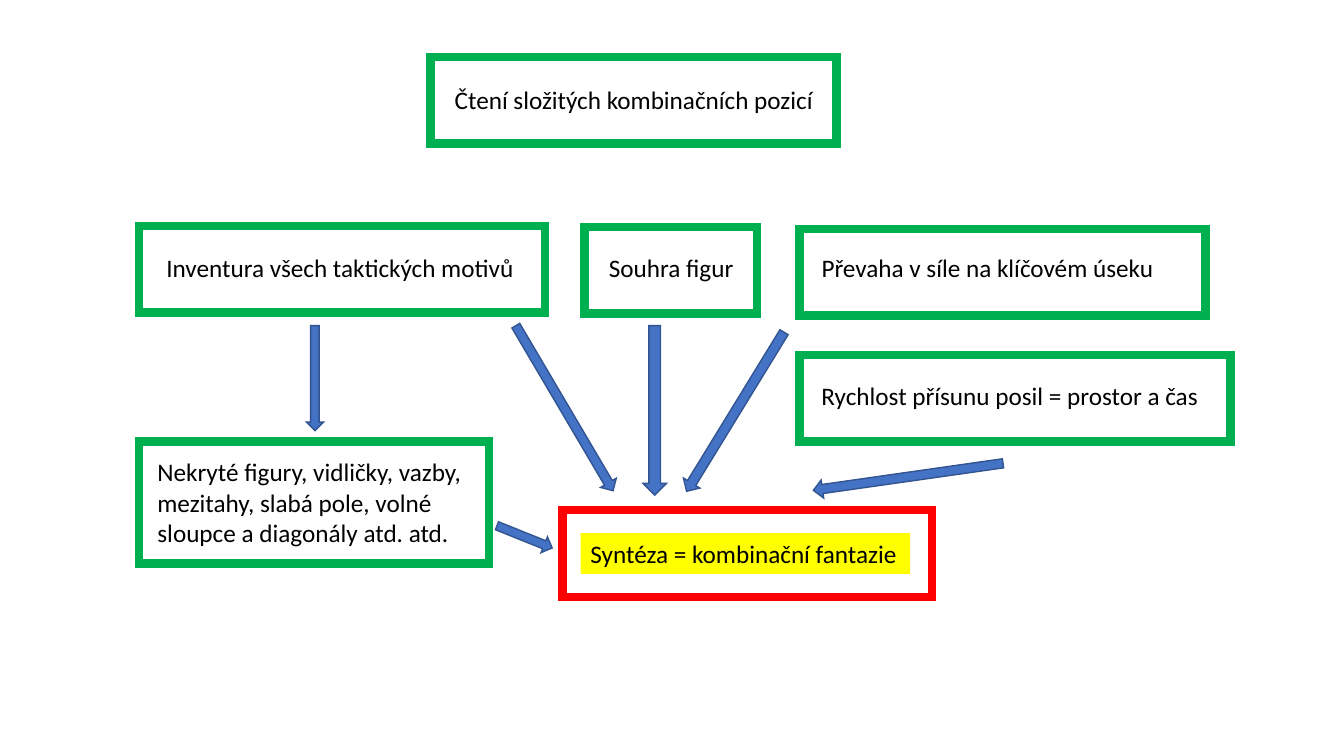
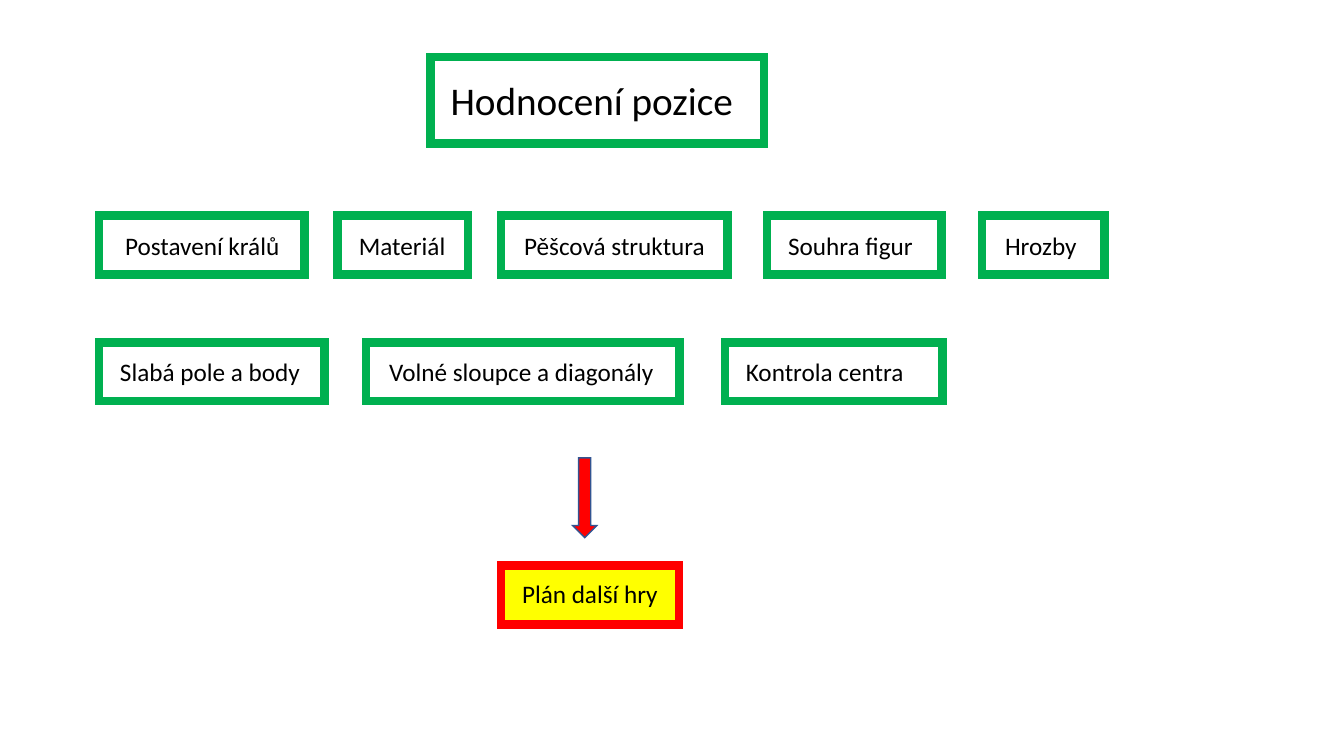
"""Two chess diagrams: reading combinations and evaluating a position."""
from lxml import etree
from pptx import Presentation
from pptx.dml.color import RGBColor
from pptx.enum.shapes import MSO_SHAPE
from pptx.enum.text import MSO_ANCHOR, PP_ALIGN
from pptx.oxml.ns import qn
from pptx.util import Pt

RECTANGLE, DOWN_ARROW = MSO_SHAPE.RECTANGLE, MSO_SHAPE.DOWN_ARROW
TOP, LEFT = MSO_ANCHOR.TOP, PP_ALIGN.LEFT

COLORS = {
    "topic": "00B050",
    "result": "FF0000",
    "highlight": "FFFF00",
    "arrow": "4472C4",
    "arrow_edge": "325491",
    "text": "000000",
}
FONT = "Calibri"
FRAME_WIDTH = 6
FRAME_FORMAT = {
    "word_wrap": True,
    "vertical_anchor": TOP,
    "margin_right": Pt(4),
    "margin_bottom": Pt(0),
}


def add_outline(slide, preset, bounds, fill=None, edge=None, edge_width=1):
    shape = slide.shapes.add_shape(preset, *map(Pt, bounds))
    shape.shadow.inherit = False
    if fill:
        shape.fill.solid()
        shape.fill.fore_color.rgb = RGBColor.from_string(COLORS[fill])
    else:
        shape.fill.background()
    if edge:
        shape.line.color.rgb = RGBColor.from_string(COLORS[edge])
        shape.line.width = Pt(edge_width)
        outline = shape._element.spPr.find(qn("a:ln"))
        etree.SubElement(outline, qn("a:miter"), lim="800000")
    else:
        shape.line.fill.background()
    return shape


def add_label(shape, text, inset_left, inset_top, size=18):
    frame = shape.text_frame
    insets = {"margin_left": Pt(inset_left), "margin_top": Pt(inset_top)}
    for name, value in {**FRAME_FORMAT, **insets}.items():
        setattr(frame, name, value)
    paragraph = frame.paragraphs[0]
    paragraph.alignment = LEFT
    run = paragraph.add_run()
    run.text = text
    for name, value in {"name": FONT, "size": Pt(size)}.items():
        setattr(run.font, name, value)
    run.font.color.rgb = RGBColor.from_string(COLORS["text"])


prs = Presentation()
prs.slide_width, prs.slide_height = Pt(960), Pt(540)
blank = prs.slide_layouts[6]

combinations = prs.slides.add_slide(blank)
combination_topics = [
    ("Čtení složitých kombinačních pozicí", (307.5, 40.5, 290, 62), 17.3, 20),
    ("Inventura všech taktických motivů", (99.4, 161.3, 290, 62), 19.4, 18.7),
    ("Souhra figur", (417.6, 162, 123, 62), 17.3, 18),
    ("Převaha v síle na klíčovém úseku", (571, 163.4, 290, 62), 15.8, 16.6),
    ("Rychlost přísunu posil = prostor a čas", (571, 253.4, 308, 62), 15.8, 18),
    ("Nekryté figury, vidličky, vazby, mezitahy, slabá pole, volné sloupce a diagonály atd. atd.",
     (99.4, 315.4, 250, 87), 13, 10.8),
]
for text, bounds, inset_left, inset_top in combination_topics:
    topic = add_outline(combinations, RECTANGLE, bounds, edge="topic", edge_width=FRAME_WIDTH)
    add_label(topic, text, inset_left, inset_top)

add_outline(combinations, RECTANGLE, (401.8, 364.3, 264, 62), edge="result", edge_width=FRAME_WIDTH)
synthesis = add_outline(combinations, RECTANGLE, (414.7, 380.9, 235.4, 29), fill="highlight")
add_label(synthesis, "Syntéza = kombinační fantazie", 7.2, 3.6)

combination_arrows = [
    ((396.7, 223.2, 13, 136.8), 329.5),
    ((642.2, 272.2, 13, 136.8), 81.9),
    ((368.6, 362.2, 12.2, 42.5), 291.9),
    ((459.4, 232.6, 16.6, 121), 0),
    ((218.9, 232.6, 12.2, 75), 0),
    ((518.4, 227.5, 13.7, 133.2), 31.5),
]
for bounds, rotation in combination_arrows:
    arrow = add_outline(combinations, DOWN_ARROW, bounds, fill="arrow", edge="arrow_edge")
    arrow.rotation = rotation

evaluation = prs.slides.add_slide(blank)
heading = add_outline(evaluation, RECTANGLE, (307.5, 40.5, 238.3, 62), edge="topic", edge_width=FRAME_WIDTH)
add_label(heading, "Hodnocení pozice", 14.3, 14.2, size=28)

criteria_rows = {
    154: [
        ("Postavení králů", 70.6, 147, 18.7),
        ("Materiál", 241.2, 93, 15.1),
        ("Pěšcová struktura", 357.8, 162, 16.6),
        ("Souhra figur", 547.9, 124.6, 15.1),
        ("Hrozby", 701.3, 87.8, 16.6),
    ],
    244.6: [
        ("Slabá pole a body", 70.6, 161.3, 15.1),
        ("Volné sloupce a diagonály", 261.4, 224, 16.6),
        ("Kontrola centra", 517.7, 155.5, 15.1),
    ],
}
for top, criteria in criteria_rows.items():
    for text, left, width, inset_left in criteria:
        criterion = add_outline(
            evaluation, RECTANGLE, (left, top, width, 42), edge="topic", edge_width=FRAME_WIDTH)
        add_label(criterion, text, inset_left, 10.2)

add_outline(evaluation, DOWN_ARROW, (409, 327, 17.3, 57), fill="result", edge="arrow_edge")
plan = add_outline(
    evaluation, RECTANGLE, (357.8, 404, 127.4, 42), fill="highlight", edge="result", edge_width=FRAME_WIDTH)
add_label(plan, "Plán další hry", 15.1, 9.4)

prs.save("out.pptx")
